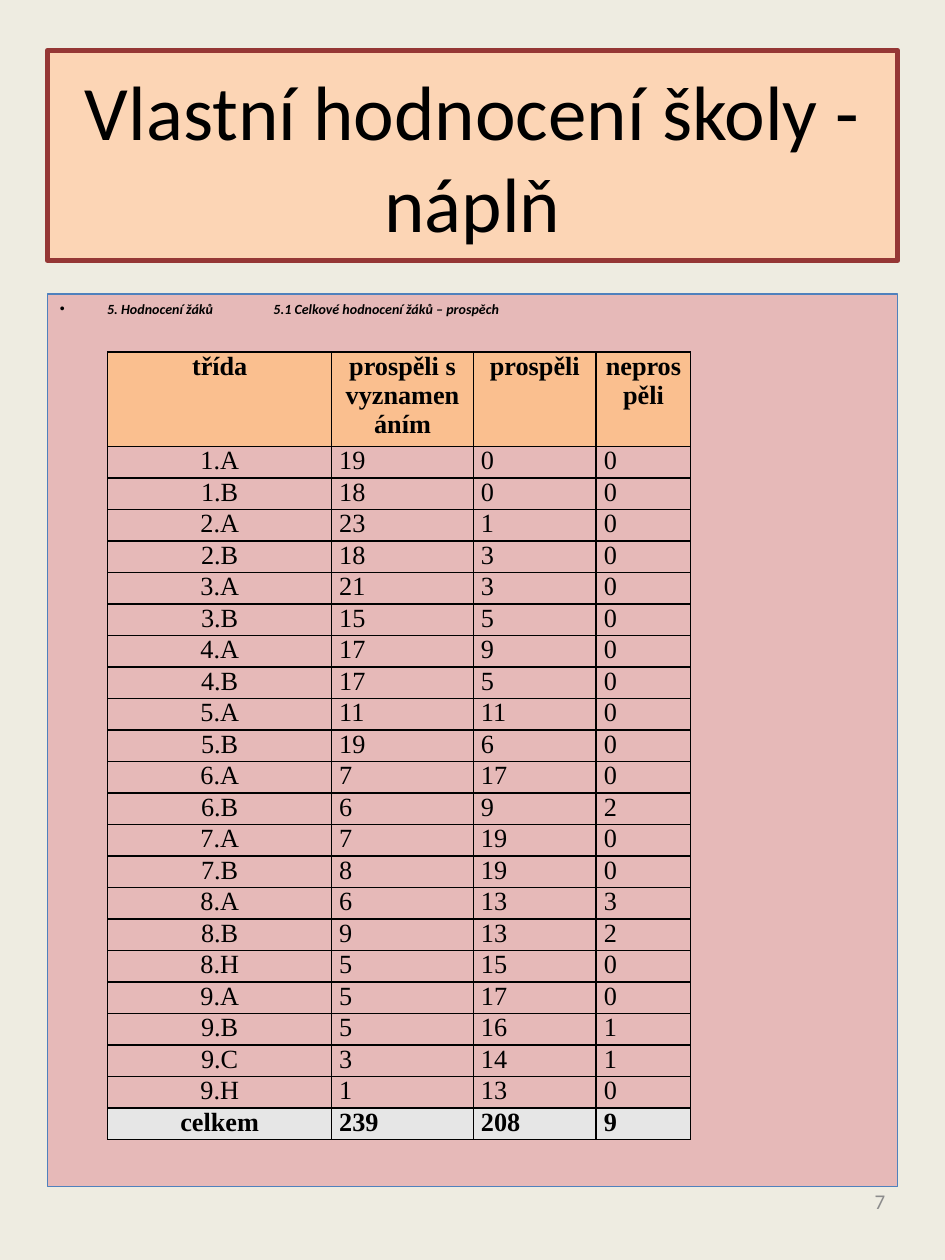
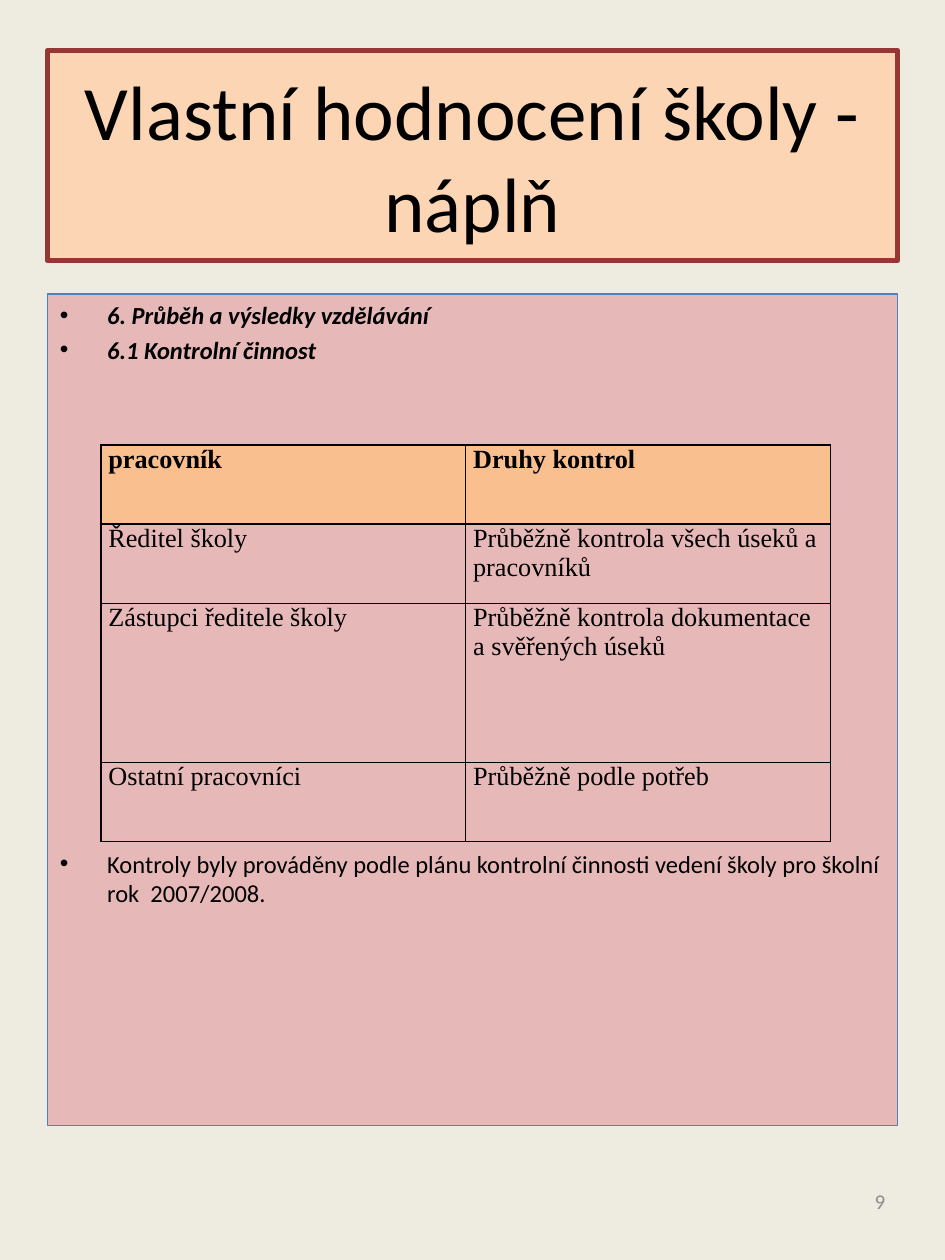
from dataclasses import dataclass

from lxml import etree
from pptx import Presentation
from pptx import util as u
from pptx.dml.color import RGBColor
from pptx.enum import text
from pptx.oxml.ns import qn

WIDTH, HEIGHT = u.Inches(7.5), u.Inches(10)
COLORS = {
    "background": "EEECE1",
    "title": "FCD5B5",
    "title_line": "953735",
    "body": "E6B9B8",
    "body_line": "4F81BD",
    "header": "FABF8F",
    "total": "E6E6E6",
    "ink": "000000",
    "number": "8C8C8C",
}
SANS, SERIF = "Calibri", "Times New Roman"
TITLE = "Vlastní hodnocení školy - náplň"
LEFT, CENTER, RIGHT = text.PP_ALIGN.LEFT, text.PP_ALIGN.CENTER, text.PP_ALIGN.RIGHT

RESULTS = [
    ("třída", "prospěli s vyznamenáním", "prospěli", "neprospěli"),
    ("1.A", 19, 0, 0),
    ("1.B", 18, 0, 0),
    ("2.A", 23, 1, 0),
    ("2.B", 18, 3, 0),
    ("3.A", 21, 3, 0),
    ("3.B", 15, 5, 0),
    ("4.A", 17, 9, 0),
    ("4.B", 17, 5, 0),
    ("5.A", 11, 11, 0),
    ("5.B", 19, 6, 0),
    ("6.A", 7, 17, 0),
    ("6.B", 6, 9, 2),
    ("7.A", 7, 19, 0),
    ("7.B", 8, 19, 0),
    ("8.A", 6, 13, 3),
    ("8.B", 9, 13, 2),
    ("8.H", 5, 15, 0),
    ("9.A", 5, 17, 0),
    ("9.B", 5, 16, 1),
    ("9.C", 3, 14, 1),
    ("9.H", 1, 13, 0),
    ("celkem", 239, 208, 9),
]
INSPECTIONS = [
    ("pracovník", "Druhy kontrol"),
    ("Ředitel školy", "Průběžně kontrola všech úseků a pracovníků"),
    ("Zástupci ředitele školy", "Průběžně kontrola dokumentace a svěřených úseků"),
    ("Ostatní pracovníci", "Průběžně podle potřeb"),
]


@dataclass(frozen=True)
class Box:
    """Shares of the slide's size in percent."""

    left: float
    top: float
    width: float
    height: float

    def lengths(self) -> tuple[int, int, int, int]:
        return across(self.left), down(self.top), across(self.width), down(self.height)


@dataclass(frozen=True)
class Bullet:
    words: str
    size: float
    emphasis: bool = True
    space_before: float | None = None
    tab: float | None = None


@dataclass(frozen=True)
class Grid:
    left: float
    top: float
    columns: list[float]
    rows: list[float]
    values: list[tuple]
    centered_labels: bool = False
    total_row: bool = False


@dataclass(frozen=True)
class Page:
    number: str
    body_height: float
    bullets: list[Bullet]
    grid: Grid


TITLE_BOX = Box(5, 4, 90, 16.67)
NUMBER_BOX = Box(71.67, 92.67, 23.33, 5.33)
BODY_TOP = 23.33

PAGES = [
    Page(
        "7",
        70.83,
        [Bullet("5. Hodnocení žáků\t5.1 Celkové hodnocení žáků – prospěch", 8, tab=22.6)],
        Grid(11.4, 27.95, [23.7, 15, 13, 10], [7.5] + [2.5] * 22, RESULTS, True, True),
    ),
    Page(
        "9",
        66,
        [
            Bullet("6. Průběh a výsledky vzdělávání", 14),
            Bullet("6.1 Kontrolní činnost", 14),
            Bullet(
                "Kontroly byly prováděny podle plánu kontrolní činnosti vedení školy "
                "pro školní rok  2007/2008.",
                14,
                emphasis=False,
                space_before=277,
            ),
        ],
        Grid(10.67, 35.3, [38.6, 38.6], [6.3, 6.3, 12.6, 6.3], INSPECTIONS),
    ),
]


def across(share: float) -> int:
    return round(WIDTH * share / 100)


def down(share: float) -> int:
    return round(HEIGHT * share / 100)


def color(name: str) -> RGBColor:
    return RGBColor.from_string(COLORS[name])


def write(paragraph, words: str, *, size: float, font: str = SANS, ink: str = "ink",
          bold: bool = False, italic: bool = False, align=LEFT) -> None:
    paragraph.alignment = align
    run = paragraph.add_run()
    run.text = words
    run.font.name, run.font.size = font, u.Pt(size)
    run.font.bold, run.font.italic = bold, italic
    run.font.color.rgb = color(ink)


def format_panel(shape, box: Box, fill: str, line: str, line_width: float) -> None:
    shape.left, shape.top, shape.width, shape.height = box.lengths()
    shape.fill.solid()
    shape.fill.fore_color.rgb = color(fill)
    shape.line.color.rgb = color(line)
    shape.line.width = u.Pt(line_width)
    shape.text_frame.word_wrap = True
    shape.text_frame.auto_size = text.MSO_AUTO_SIZE.NONE


def write_bullet(paragraph, bullet: Bullet) -> None:
    write(paragraph, bullet.words, size=bullet.size, bold=bullet.emphasis, italic=bullet.emphasis)
    space = 0.2 * bullet.size if bullet.space_before is None else bullet.space_before
    paragraph.space_before = u.Pt(space)
    properties = paragraph._p.get_or_add_pPr()
    properties.set("marL", str(across(5)))
    properties.set("indent", str(-across(5)))
    if bullet.tab is not None:
        tabs = etree.SubElement(properties, qn("a:tabLst"))
        etree.SubElement(tabs, qn("a:tab"), pos=str(across(bullet.tab)), algn="l")


def add_borders(cell) -> None:
    properties = cell._tc.get_or_add_tcPr()
    for side in ("lnL", "lnR", "lnT", "lnB"):
        line = etree.SubElement(properties, qn(f"a:{side}"), w=str(u.Pt(1)))
        fill = etree.SubElement(line, qn("a:solidFill"))
        etree.SubElement(fill, qn("a:srgbClr"), val=COLORS["ink"])


def fill_cell(cell, value, *, fill: str | None, align) -> None:
    add_borders(cell)
    cell.margin_left = cell.margin_right = u.Inches(0.06)
    cell.margin_top = cell.margin_bottom = 0
    if fill:
        cell.fill.solid()
        cell.fill.fore_color.rgb = color(fill)
    else:
        cell.fill.background()
    write(cell.text_frame.paragraphs[0], str(value), size=15, font=SERIF,
          bold=fill is not None, align=align)


def add_grid(slide, grid: Grid) -> None:
    box = Box(grid.left, grid.top, sum(grid.columns), sum(grid.rows))
    table = slide.shapes.add_table(len(grid.rows), len(grid.columns), *box.lengths()).table
    table.first_row = table.horz_banding = False
    for column, share in zip(table.columns, grid.columns):
        column.width = across(share)
    for row, share in zip(table.rows, grid.rows):
        row.height = down(share)
    fills = {0: "header"}
    if grid.total_row:
        fills[len(grid.rows) - 1] = "total"
    for row_index, values in enumerate(grid.values):
        for column_index, value in enumerate(values):
            centered = grid.centered_labels and 0 in (row_index, column_index)
            fill_cell(table.cell(row_index, column_index), value,
                      fill=fills.get(row_index), align=CENTER if centered else LEFT)


def add_number(slide, number: str) -> None:
    frame = slide.shapes.add_textbox(*NUMBER_BOX.lengths()).text_frame
    frame.word_wrap = True
    frame.vertical_anchor = text.MSO_ANCHOR.MIDDLE
    write(frame.paragraphs[0], number, size=12, ink="number", align=RIGHT)


def add_page(presentation, page: Page) -> None:
    slide = presentation.slides.add_slide(presentation.slide_layouts[1])
    title, body = slide.shapes.title, slide.placeholders[1]
    format_panel(title, TITLE_BOX, "title", "title_line", 3)
    title.text_frame.vertical_anchor = text.MSO_ANCHOR.MIDDLE
    write(title.text_frame.paragraphs[0], TITLE, size=44, align=CENTER)
    format_panel(body, Box(5, BODY_TOP, 90, page.body_height), "body", "body_line", 0.75)
    frame = body.text_frame
    for index, bullet in enumerate(page.bullets):
        write_bullet(frame.add_paragraph() if index else frame.paragraphs[0], bullet)
    add_grid(slide, page.grid)
    add_number(slide, page.number)


def main() -> None:
    presentation = Presentation()
    presentation.slide_width, presentation.slide_height = WIDTH, HEIGHT
    background = presentation.slide_master.background.fill
    background.solid()
    background.fore_color.rgb = color("background")
    for page in PAGES:
        add_page(presentation, page)
    presentation.save("out.pptx")


if __name__ == "__main__":
    main()
